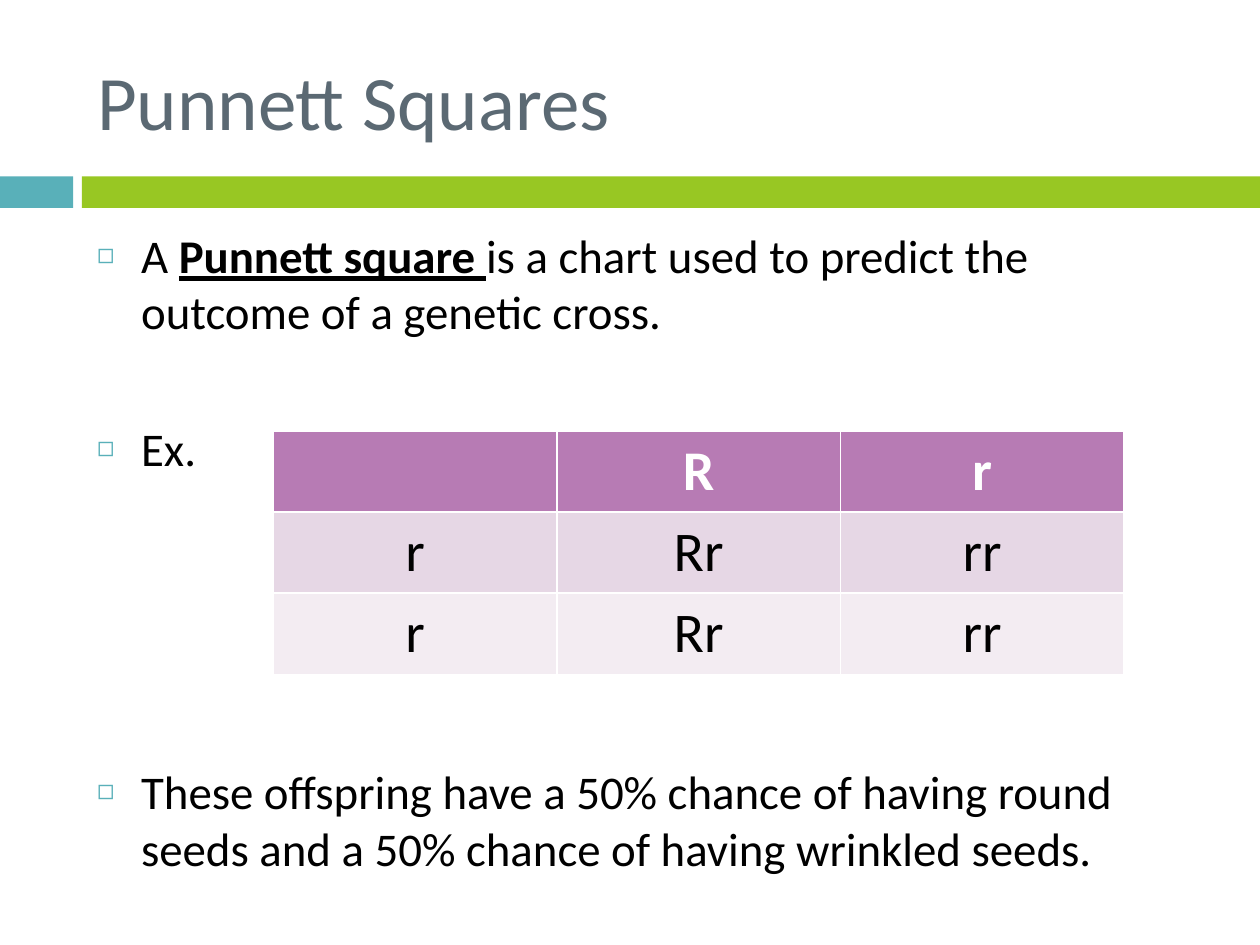
from lxml import etree
from pptx import Presentation
from pptx.dml.color import RGBColor
from pptx.enum import shapes, text
from pptx.oxml.ns import qn
from pptx.util import Inches, Pt

TEAL, GREEN, SLATE = "59B0B9", "98C723", "5B6973"
BLACK, WHITE = "000000", "FFFFFF"


def color(value):
    return RGBColor.from_string(value)


def add_span(para, words, size, value, bold=False, underline=False):
    span = para.add_run()
    span.text = words
    span.font.name = "Calibri"
    span.font.size = Pt(size)
    span.font.color.rgb = color(value)
    span.font.bold = bold
    span.font.underline = underline


deck = Presentation()
deck.slide_width, deck.slide_height = Inches(10), Inches(7.5)
page = deck.slides.add_slide(deck.slide_layouts[1])

# Band under the title
for left, width, fill in ((0, 0.58, TEAL), (0.65, 9.35, GREEN)):
    bar = page.shapes.add_shape(shapes.MSO_SHAPE.RECTANGLE, Inches(left), Inches(1.4),
                                Inches(width), Inches(0.25))
    bar.shadow.inherit = False
    bar.fill.solid()
    bar.fill.fore_color.rgb = color(fill)
    bar.line.fill.background()

# Title and body placeholders
title, body = page.shapes.title, page.placeholders[1]
for box, top, height, anchor in ((title, 0.25, 1.08, text.MSO_ANCHOR.MIDDLE),
                                 (body, 1.75, 5.25, text.MSO_ANCHOR.TOP)):
    box.left, box.top = Inches(0.67), Inches(top)
    box.width, box.height = Inches(8.92), Inches(height)
    box.text_frame.word_wrap = True
    box.text_frame.auto_size = text.MSO_AUTO_SIZE.NONE
    box.text_frame.vertical_anchor = anchor

heading = title.text_frame.paragraphs[0]
heading.alignment = text.PP_ALIGN.LEFT
add_span(heading, "Punnett Squares", 44, SLATE)

# Each bullet: space before in points, then (words, emphasised) spans
bullets = [
    (7, [("A ", False), ("Punnett square ", True),
         ("is a chart used to predict the outcome of a genetic cross.", False)]),
    (46, [("Ex.", False)]),
    (164, [("These offspring have a 50% chance of having round seeds "
            "and a 50% chance of having wrinkled seeds.", False)]),
]
for index, (gap, spans) in enumerate(bullets):
    frame = body.text_frame
    para = frame.add_paragraph() if index else frame.paragraphs[0]
    para.space_before = Pt(gap)
    for words, strong in spans:
        add_span(para, words, 26.8, BLACK, strong, strong)
    props = para._p.get_or_add_pPr()
    props.set("marL", str(Inches(0.35)))
    props.set("indent", str(-Inches(0.35)))
    bullet_color = etree.SubElement(props, qn("a:buClr"))
    etree.SubElement(bullet_color, qn("a:srgbClr"), val=TEAL)
    etree.SubElement(props, qn("a:buSzPct"), val="60000")
    etree.SubElement(props, qn("a:buChar"), char="◻")

# Punnett square; the table style supplies the white borders
rows = [["", "R", "r"], ["r", "Rr", "rr"], ["r", "Rr", "rr"]]
fills = ["B77BB4", "E6D7E5", "F3ECF2"]
square = page.shapes.add_table(3, 3, Inches(2.17), Inches(3.42),
                               Inches(6.75), Inches(1.9)).table
for column in square.columns:
    column.width = Inches(2.25)
for r, (alleles, fill) in enumerate(zip(rows, fills)):
    for c, allele in enumerate(alleles):
        cell = square.cell(r, c)
        cell.fill.solid()
        cell.fill.fore_color.rgb = color(fill)
        if allele:
            para = cell.text_frame.paragraphs[0]
            para.alignment = text.PP_ALIGN.CENTER
            add_span(para, allele, 32, BLACK if r else WHITE, bold=r == 0)

deck.save("out.pptx")
